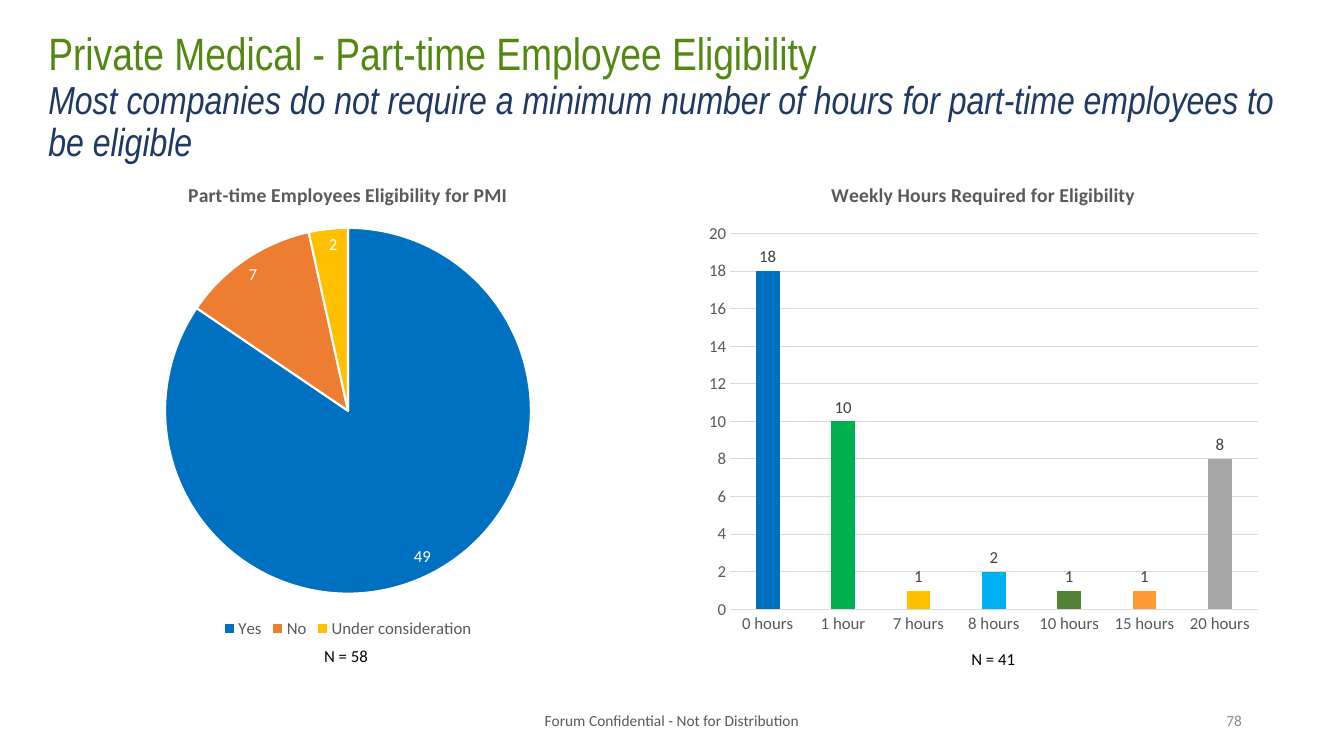
from pptx import Presentation
from pptx.chart.data import CategoryChartData
from pptx.dml.color import RGBColor
from pptx.enum.chart import XL_CHART_TYPE, XL_LABEL_POSITION, XL_LEGEND_POSITION, XL_TICK_MARK
from pptx.enum.text import MSO_ANCHOR, PP_ALIGN
from pptx.util import Cm, Pt

PIE, COLUMN = XL_CHART_TYPE.PIE, XL_CHART_TYPE.COLUMN_CLUSTERED
INSIDE_END, OUTSIDE_END = XL_LABEL_POSITION.INSIDE_END, XL_LABEL_POSITION.OUTSIDE_END
LEGEND_BOTTOM = XL_LEGEND_POSITION.BOTTOM
NO_TICK = XL_TICK_MARK.NONE
TOP, MIDDLE = MSO_ANCHOR.TOP, MSO_ANCHOR.MIDDLE
LEFT, CENTER, RIGHT = PP_ALIGN.LEFT, PP_ALIGN.CENTER, PP_ALIGN.RIGHT

GREEN = RGBColor(0x52, 0x88, 0x11)
NAVY = RGBColor(0x20, 0x38, 0x64)
BLACK = RGBColor(0, 0, 0)
WHITE = RGBColor(0xFF, 0xFF, 0xFF)
CHARCOAL = RGBColor(0x40, 0x40, 0x40)
GRAY = RGBColor(0x59, 0x59, 0x59)
PAGE_GRAY = RGBColor(0x8C, 0x8C, 0x8C)
GRID_GRAY = RGBColor(0xD9, 0xD9, 0xD9)
BLUE = RGBColor(0x00, 0x70, 0xC0)
ORANGE = RGBColor(0xED, 0x7D, 0x31)
GOLD = RGBColor(0xFF, 0xC0, 0x00)
EMERALD = RGBColor(0x00, 0xB0, 0x50)
SKY = RGBColor(0x00, 0xB0, 0xF0)
OLIVE = RGBColor(0x54, 0x82, 0x35)
APRICOT = RGBColor(0xFF, 0x99, 0x33)
SILVER = RGBColor(0xA6, 0xA6, 0xA6)

# Content
HEADLINE = "Private Medical - Part-time Employee Eligibility"
TAKEAWAY = ("Most companies do not require a minimum number of hours "
            "for part-time employees to be eligible")
ELIGIBILITY_TITLE = "Part-time Employees Eligibility for PMI"
ELIGIBILITY = [("Yes", 49, BLUE), ("No", 7, ORANGE), ("Under consideration", 2, GOLD)]
HOURS_TITLE = "Weekly Hours Required for Eligibility"
HOURS = [
    ("0 hours", 18, BLUE), ("1 hour", 10, EMERALD), ("7 hours", 1, GOLD),
    ("8 hours", 2, SKY), ("10 hours", 1, OLIVE), ("15 hours", 1, APRICOT),
    ("20 hours", 8, SILVER),
]
# text, left, top, width, height (cm), size, colour, alignment, anchor
SMALL_TEXTS = [
    ("N = 58", 7.92, 16.15, 1.7, 0.77, 12, BLACK, LEFT, TOP),
    ("N = 41", 24.23, 16.21, 1.7, 0.77, 12, BLACK, LEFT, TOP),
    ("Forum Confidential - Not for Distribution", 11.22, 17.65, 11.43, 1.01,
     11, GRAY, CENTER, MIDDLE),
    ("78", 23.93, 17.65, 7.62, 1.01, 11, PAGE_GRAY, RIGHT, MIDDLE),
]
CHART_TOP, CHART_WIDTH, CHART_HEIGHT = Cm(4.11), Cm(14.4), Cm(12.09)


def style(font, size, color, bold=False, name="Calibri"):
    font.name, font.size, font.bold = name, Pt(size), bold
    font.color.rgb = color


def add_text_box(slide, left, top, width, height, anchor):
    frame = slide.shapes.add_textbox(Cm(left), Cm(top), Cm(width), Cm(height)).text_frame
    frame.word_wrap = True
    frame.vertical_anchor = anchor
    return frame


def add_survey_chart(slide, kind, left, title, answers, label_color, label_position):
    data = CategoryChartData()
    data.categories = [answer for answer, _, _ in answers]
    data.add_series("Series 1", [count for _, count, _ in answers])
    chart = slide.shapes.add_chart(kind, left, CHART_TOP, CHART_WIDTH, CHART_HEIGHT, data).chart
    style(chart.font, 12, BLACK)
    chart.has_legend = False
    chart.has_title = True
    heading = chart.chart_title.text_frame
    heading.text = title
    style(heading.paragraphs[0].font, 14, GRAY, bold=True)
    chart.chart_title.include_in_layout = False

    plot = chart.plots[0]
    plot.vary_by_categories = kind == PIE
    plot.has_data_labels = True
    labels = plot.data_labels
    labels.show_value = True
    labels.position = label_position
    style(labels.font, 12, label_color)
    for index, (_, _, color) in enumerate(answers):
        point = plot.series[0].points[index].format
        point.fill.solid()
        point.fill.fore_color.rgb = color
        if kind == PIE:
            point.line.color.rgb = WHITE
            point.line.width = Pt(1.5)
    return chart


prs = Presentation()
prs.slide_width, prs.slide_height = Cm(33.87), Cm(19.05)
slide = prs.slides.add_slide(prs.slide_layouts[6])

# Headline and takeaway
title = add_text_box(slide, 0.97, 0.64, 32.05, 3.68, MIDDLE).paragraphs[0]
title.line_spacing = 0.9
title.font.name = "Arial Narrow"
headline = title.add_run()
headline.text = HEADLINE
style(headline.font, 32.4, GREEN, name="Arial Narrow")
title.add_line_break()
takeaway = title.add_run()
takeaway.text = TAKEAWAY
style(takeaway.font, 27.9, NAVY, name="Arial Narrow")
takeaway.font.italic = True

# Weekly hours columns
hours = add_survey_chart(slide, COLUMN, Cm(17.58), HOURS_TITLE, HOURS, CHARCOAL, OUTSIDE_END)
hours.plots[0].gap_width = 219
hours.plots[0].overlap = -27
for axis in (hours.category_axis, hours.value_axis):
    axis.major_tick_mark = axis.minor_tick_mark = NO_TICK
    style(axis.tick_labels.font, 12, GRAY)
count_axis = hours.value_axis
count_axis.minimum_scale, count_axis.maximum_scale, count_axis.major_unit = 0, 20, 2
count_axis.format.line.fill.background()
for line in (hours.category_axis.format.line, count_axis.major_gridlines.format.line):
    line.color.rgb = GRID_GRAY
    line.width = Pt(0.75)

# Eligibility pie
eligibility = add_survey_chart(slide, PIE, Cm(1.57), ELIGIBILITY_TITLE, ELIGIBILITY,
                               WHITE, INSIDE_END)
eligibility.has_legend = True
eligibility.legend.position = LEGEND_BOTTOM
eligibility.legend.include_in_layout = False
style(eligibility.legend.font, 12, GRAY)

# Sample sizes and footer
for text, left, top, width, height, size, color, alignment, anchor in SMALL_TEXTS:
    frame = add_text_box(slide, left, top, width, height, anchor)
    frame.text = text
    frame.paragraphs[0].alignment = alignment
    style(frame.paragraphs[0].font, size, color)

prs.save("out.pptx")
